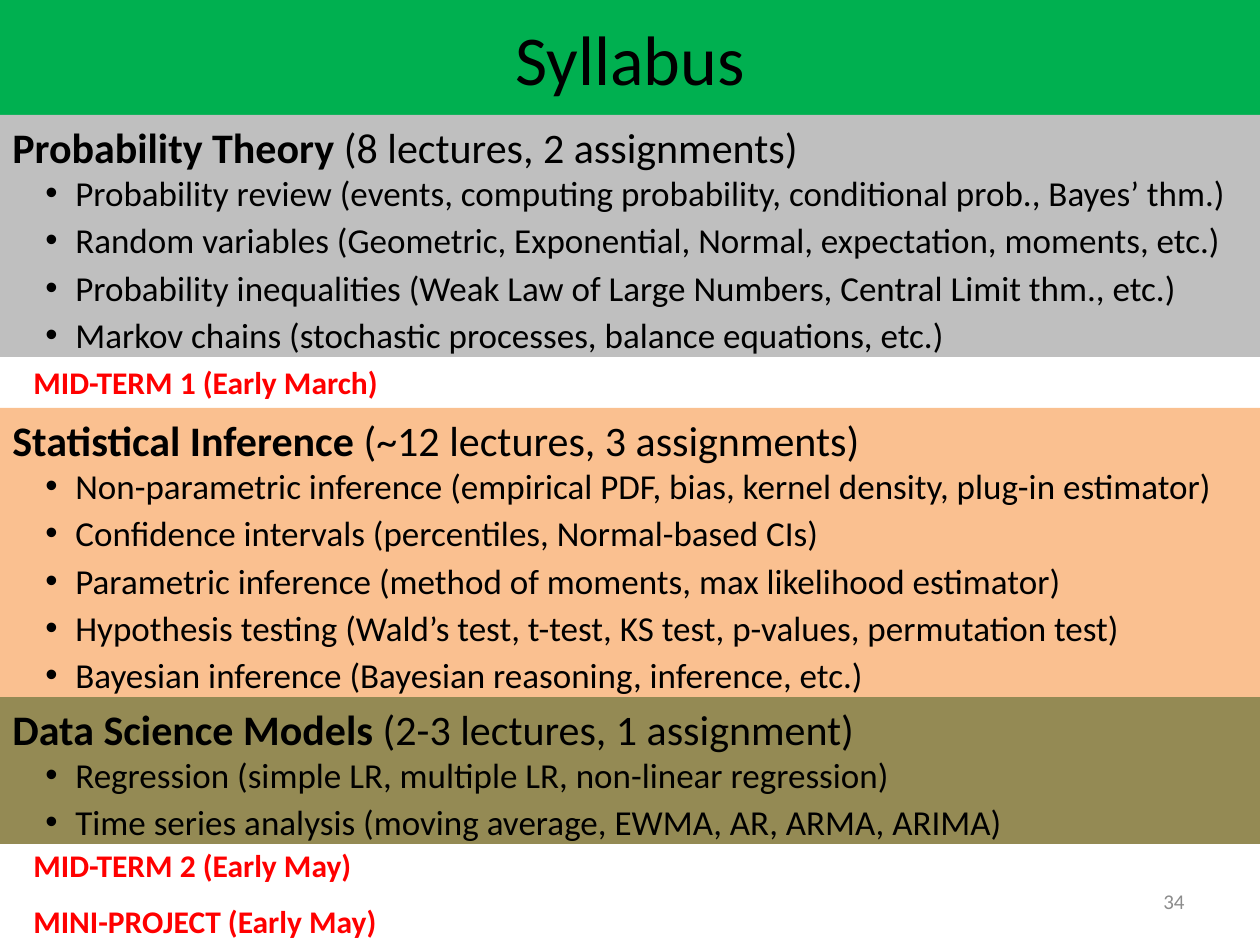
"""Build the course syllabus slide."""
from lxml import etree
from pptx import Presentation
from pptx import util as u
from pptx.dml.color import RGBColor
from pptx.enum import shapes, text
from pptx.oxml.ns import qn

GREEN = RGBColor(0x00, 0xB0, 0x50)
GRAY = RGBColor(0xBF, 0xBF, 0xBF)
ORANGE = RGBColor(0xFA, 0xC0, 0x90)
OLIVE = RGBColor(0x94, 0x8A, 0x54)
BLACK = RGBColor(0x00, 0x00, 0x00)
RED = RGBColor(0xFF, 0x00, 0x00)
NUMBER_GRAY = RGBColor(0x8C, 0x8C, 0x8C)


def px(*lengths):
    return [u.Emu(round(length * 914400 / 126)) for length in lengths]


def add_span(para, words, size, color, bold=False):
    span = para.add_run()
    span.text = words
    span.font.name = "Calibri"
    span.font.size = u.Pt(size)
    span.font.bold = bold
    span.font.color.rgb = color


deck = Presentation()
deck.slide_width, deck.slide_height = px(1260, 945)
page = deck.slides.add_slide(deck.slide_layouts[5])

title = page.shapes.title
title.left, title.top, title.width, title.height = px(0, 0, 1260, 115)
title.fill.solid()
title.fill.fore_color.rgb = GREEN
title.text_frame.vertical_anchor = text.MSO_ANCHOR.MIDDLE
title_para = title.text_frame.paragraphs[0]
title_para.alignment = text.PP_ALIGN.CENTER
add_span(title_para, "Syllabus", 40, BLACK)

sections = [
    (697, 147, OLIVE, "Data Science Models ", "(2-3 lectures, 1 assignment)", [
        "Regression (simple LR, multiple LR, non-linear regression)",
        "Time series analysis (moving average, EWMA, AR, ARMA, ARIMA)",
    ]),
    (408, 289, ORANGE, "Statistical Inference", " (~12 lectures, 3 assignments)", [
        "Non-parametric inference (empirical PDF, bias, kernel density, plug-in estimator)",
        "Confidence intervals (percentiles, Normal-based CIs)",
        "Parametric inference (method of moments, max likelihood estimator)",
        "Hypothesis testing (Wald’s test, t-test, KS test, p-values, permutation test)",
        "Bayesian inference (Bayesian reasoning, inference, etc.)",
    ]),
    (115, 242, GRAY, "Probability Theory ", "(8 lectures, 2 assignments)", [
        "Probability review (events, computing probability, conditional prob., Bayes’ thm.)",
        "Random variables (Geometric, Exponential, Normal, expectation, moments, etc.)",
        "Probability inequalities (Weak Law of Large Numbers, Central Limit thm., etc.)",
        "Markov chains (stochastic processes, balance equations, etc.)",
    ]),
]
for top, height, color, topic, workload, items in sections:
    box = page.shapes.add_shape(shapes.MSO_SHAPE.RECTANGLE, *px(0, top, 1260, height))
    box.shadow.inherit = False
    box.fill.solid()
    box.fill.fore_color.rgb = color
    box.line.fill.background()
    frame = box.text_frame
    frame.word_wrap = True
    frame.vertical_anchor = text.MSO_ANCHOR.TOP
    para = frame.paragraphs[0]
    para.alignment = text.PP_ALIGN.LEFT
    add_span(para, topic, 24, BLACK, True)
    add_span(para, workload, 24, BLACK)
    for item in items:
        para = frame.add_paragraph()
        para.alignment = text.PP_ALIGN.LEFT
        para.level = 1
        para.space_after = u.Pt(3)
        indent, hanging = px(63, -30)
        properties = para._p.get_or_add_pPr()
        properties.set("marL", str(indent))
        properties.set("indent", str(hanging))
        etree.SubElement(properties, qn("a:buFont"), typeface="Arial")
        etree.SubElement(properties, qn("a:buChar"), char="•")
        add_span(para, item, 20, BLACK)

labels = [
    (903, 876, 294, 50, "34", 12, NUMBER_GRAY, False, text.PP_ALIGN.RIGHT),
    (21, 357, 399, 50, "MID-TERM 1 (Early March)", 18, RED, True, text.PP_ALIGN.LEFT),
    (21, 840, 420, 50, "MID-TERM 2 (Early May)", 18, RED, True, text.PP_ALIGN.LEFT),
    (21, 896, 557, 50, "MINI-PROJECT (Early May)", 18, RED, True, text.PP_ALIGN.LEFT),
]
for left, top, width, height, words, size, color, bold, alignment in labels:
    box = page.shapes.add_textbox(*px(left, top, width, height))
    box.text_frame.word_wrap = True
    box.text_frame.vertical_anchor = text.MSO_ANCHOR.MIDDLE
    para = box.text_frame.paragraphs[0]
    para.alignment = alignment
    add_span(para, words, size, color, bold)

deck.save("out.pptx")
